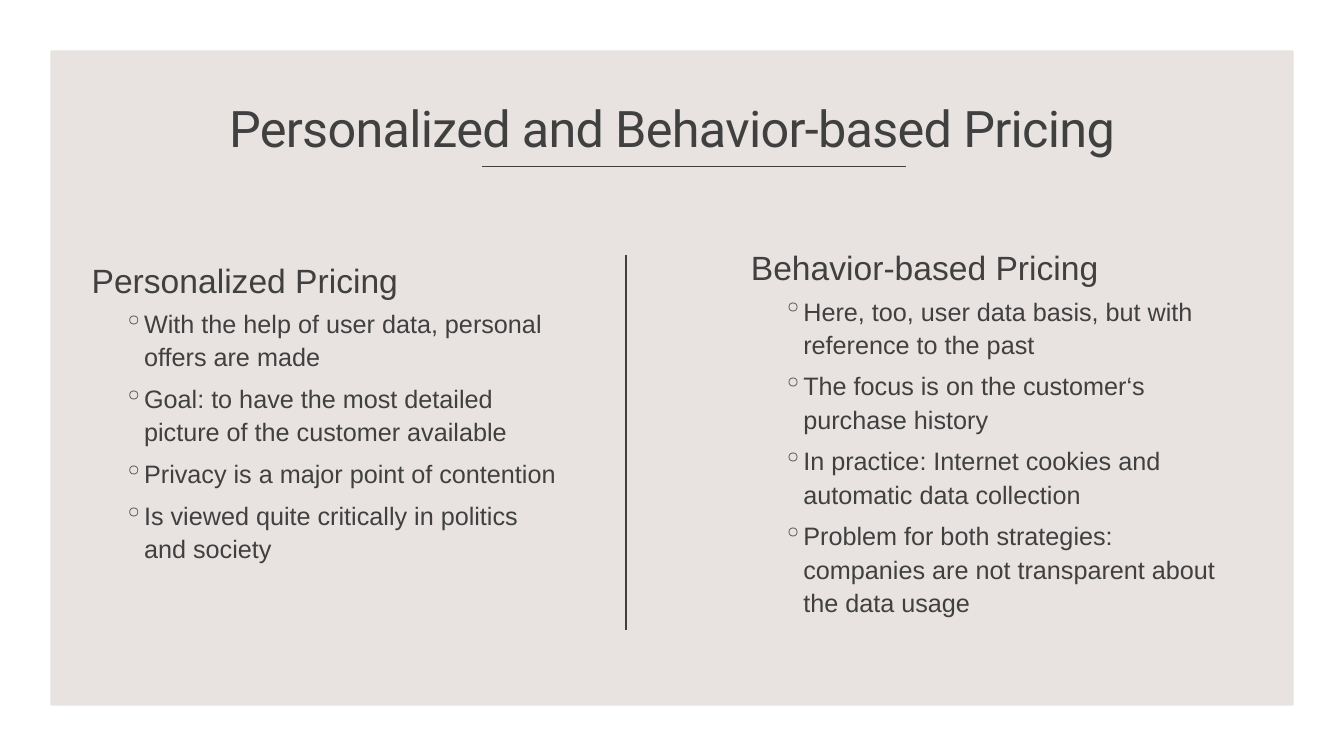
from lxml import etree
from pptx import Presentation
from pptx.dml.color import RGBColor
from pptx.enum.shapes import MSO_CONNECTOR, MSO_SHAPE
from pptx.enum.text import MSO_ANCHOR, MSO_AUTO_SIZE, PP_ALIGN
from pptx.oxml.ns import qn
from pptx.util import Pt

RECTANGLE = MSO_SHAPE.RECTANGLE
STRAIGHT = MSO_CONNECTOR.STRAIGHT
MIDDLE = MSO_ANCHOR.MIDDLE
NO_AUTOFIT = MSO_AUTO_SIZE.NONE
LEFT, CENTER = PP_ALIGN.LEFT, PP_ALIGN.CENTER

WHITE = RGBColor(0xFF, 0xFF, 0xFF)
PANEL = RGBColor(0xE8, 0xE2, 0xE1)
INK = RGBColor(0x40, 0x40, 0x40)

SLIDE_WIDTH, SLIDE_HEIGHT = 960, 540
MARGIN = 36
PANEL_WIDTH = SLIDE_WIDTH - 2 * MARGIN
COLUMN_TOP, COLUMN_WIDTH, COLUMN_HEIGHT = 129, 345.6, 356.4

# Left edge, space kept free at the bottom, heading, points
COLUMNS = [
    (58.3, 33, "Personalized Pricing", [
        "With the help of user data, personal offers are made",
        "Goal: to have the most detailed picture of the customer available",
        "Privacy is a major point of contention",
        "Is viewed quite critically in politics and society",
    ]),
    (529.2, 3.6, "Behavior-based Pricing", [
        "Here, too, user data basis, but with reference to the past",
        "The focus is on the customer‘s purchase history",
        "In practice: Internet cookies and automatic data collection",
        "Problem for both strategies: companies are not transparent "
        "about the data usage",
    ]),
]


def write(paragraph, text, size, font="Arial", align=LEFT, line_spacing=1.1,
          before=0, after=0, margin=0, hanging=0, bullet=None, tracking=0):
    """Fill one paragraph with formatted text."""
    run = paragraph.add_run()
    run.text = text
    run.font.name = font
    run.font.size = Pt(size)
    run.font.color.rgb = INK
    if tracking:
        run.font._element.set("spc", str(round(tracking * 100)))
    paragraph.alignment = align
    paragraph.line_spacing = line_spacing
    paragraph.space_before = Pt(before)
    paragraph.space_after = Pt(after)
    properties = paragraph._p.get_or_add_pPr()
    properties.set("marL", str(Pt(margin)))
    properties.set("indent", str(Pt(-hanging)))
    if bullet:
        etree.SubElement(properties, qn("a:buChar")).set("char", bullet)


def add_rectangle(slide, left, top, width, height, color):
    rectangle = slide.shapes.add_shape(
        RECTANGLE, Pt(left), Pt(top), Pt(width), Pt(height))
    rectangle.shadow.inherit = False
    rectangle.fill.solid()
    rectangle.fill.fore_color.rgb = color
    rectangle.line.fill.background()


def add_rule(slide, x1, y1, x2, y2):
    rule = slide.shapes.add_connector(
        STRAIGHT, Pt(x1), Pt(y1), Pt(x2), Pt(y2))
    rule.line.color.rgb = INK
    rule.line.width = Pt(1)
    etree.SubElement(rule._element.spPr, qn("a:effectLst"))


def place_title(slide, text):
    title = slide.shapes.title
    title.left, title.top = Pt(MARGIN), Pt(68.4)
    title.width, title.height = Pt(PANEL_WIDTH), Pt(50.4)
    frame = title.text_frame
    frame.auto_size = NO_AUTOFIT
    frame.word_wrap = True
    frame.vertical_anchor = MIDDLE
    write(frame.paragraphs[0], text, 36, font="Roboto", align=CENTER,
          line_spacing=0.9, tracking=-0.5)
    # Bring the title in front of the panel
    slide.shapes._spTree.append(title._element)


def add_column(slide, left, bottom_space, heading, points):
    column = slide.shapes.add_textbox(
        Pt(left), Pt(COLUMN_TOP), Pt(COLUMN_WIDTH), Pt(COLUMN_HEIGHT))
    frame = column.text_frame
    frame.word_wrap = True
    frame.vertical_anchor = MIDDLE
    frame.margin_left = frame.margin_right = 0
    frame.margin_top, frame.margin_bottom = Pt(3.6), Pt(bottom_space)
    write(frame.paragraphs[0], heading, 24, before=12, after=2, margin=7.2)
    for point in points:
        paragraph = frame.add_paragraph()
        paragraph.level = 1
        write(paragraph, point, 18, before=2, after=4,
              margin=44.64, hanging=14.4, bullet="◦")


def main():
    presentation = Presentation()
    presentation.slide_width = Pt(SLIDE_WIDTH)
    presentation.slide_height = Pt(SLIDE_HEIGHT)
    slide = presentation.slides.add_slide(presentation.slide_layouts[5])

    # Background and panel
    slide.background.fill.solid()
    slide.background.fill.fore_color.rgb = PANEL
    add_rectangle(slide, 0, 0, SLIDE_WIDTH, SLIDE_HEIGHT, WHITE)
    add_rectangle(slide, MARGIN, MARGIN, PANEL_WIDTH,
                  SLIDE_HEIGHT - 2 * MARGIN, PANEL)

    # Title with underline
    place_title(slide, "Personalized and Behavior-based Pricing")
    add_rule(slide, 344.2, 118.8, 647.3, 118.8)

    # Two columns with a divider
    for column in COLUMNS:
        add_column(slide, *column)
    add_rule(slide, 447.1, 182.2, 447.1, 450)

    presentation.save("out.pptx")


if __name__ == "__main__":
    main()
